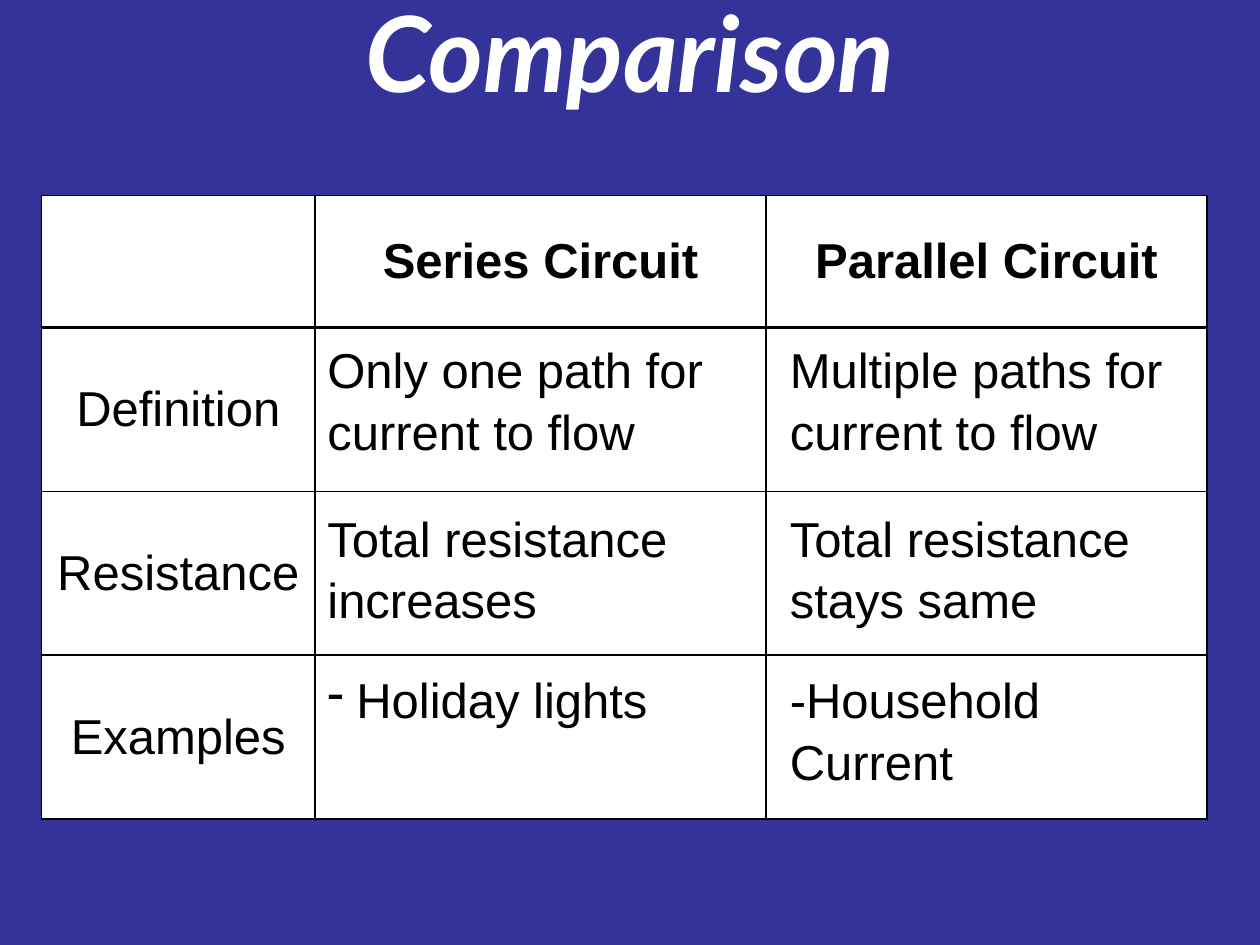
from itertools import accumulate

from lxml.etree import SubElement
from pptx import Presentation
from pptx.dml.color import RGBColor as Rgb
from pptx.enum.text import MSO_ANCHOR as Anchor, MSO_AUTO_SIZE as AutoSize, PP_ALIGN as Align
from pptx.oxml.ns import qn
from pptx.util import Inches, Pt

COLORS = {"ground": "333399", "paper": "FFFFFF", "ink": "000000"}
COLUMNS = (2.17, 3.58, 3.5)
ROWS = (1.05, 1.3, 1.3, 1.3)
GRID_AT = (0.33, 1.55)
HEADINGS = ("Series Circuit", "Parallel Circuit")
TOPICS = ("Definition", "Resistance", "Examples")
ANSWERS = (
    ("Only one path for current to flow", "Multiple paths for current to flow"),
    ("Total resistance increases", "Total resistance stays same"),
    ("Holiday lights", "-Household Current"),
)
ANSWER_HEIGHTS = ((1.03, 1.03), (1.03, 1.03), (0.57, 1.03))
TITLE_FORMAT = {"name": "Lato", "size": Pt(60), "bold": True, "italic": True}
HEADING_FORMAT = {"name": "Arial", "size": Pt(28), "bold": True}
BODY_FORMAT = {"name": "Arial", "size": Pt(28), "bold": False}


def write(frame, wording, formats, color, **layout):
    """Put one formatted paragraph into a text frame and return it."""
    paragraph = frame.paragraphs[0]
    run = paragraph.add_run()
    run.text = wording
    for key, value in formats.items():
        setattr(run.font, key, value)
    run.font.color.rgb = Rgb.from_string(COLORS[color])
    for key, value in layout.items():
        setattr(paragraph, key, value)
    return paragraph


def add_dash(paragraph, indent):
    """Give a paragraph a hanging dash."""
    properties = paragraph._p.get_or_add_pPr()
    properties.set("marL", str(indent))
    properties.set("indent", str(-indent))
    SubElement(properties, qn("a:buChar"), char="-")


def style_cell(cell, top, bottom):
    """Draw the cell's borders and fill it with paper."""
    properties = cell._tc.get_or_add_tcPr()
    for side, width in (("L", 1), ("R", 1), ("T", top), ("B", bottom)):
        line = SubElement(properties, qn(f"a:ln{side}"), w=str(Pt(width)))
        SubElement(SubElement(line, qn("a:solidFill")), qn("a:srgbClr"), val=COLORS["ink"])
    cell.fill.solid()
    cell.fill.fore_color.rgb = Rgb.from_string(COLORS["paper"])
    cell.vertical_anchor = Anchor.MIDDLE


def add_title(slide, left, top, width, height):
    """Place the heading of the slide."""
    title = slide.shapes.title
    title.left, title.top, title.width, title.height = map(Inches, (left, top, width, height))
    frame = title.text_frame
    frame.vertical_anchor = Anchor.MIDDLE
    write(frame, "Comparison", TITLE_FORMAT, "paper", alignment=Align.CENTER, line_spacing=0.8)


def add_grid(slide, left, top):
    """Place the table with its column headings and row topics."""
    box = map(Inches, (left, top, sum(COLUMNS), sum(ROWS)))
    table = slide.shapes.add_table(len(ROWS), len(COLUMNS), *box).table
    for column, width in zip(table.columns, COLUMNS):
        column.width = Inches(width)
    for index, height in enumerate(ROWS):
        table.rows[index].height = Inches(height)
        for cell in table.rows[index].cells:
            style_cell(cell, 2 if index == 1 else 1, 2 if index == 0 else 1)
    for index, heading in enumerate(HEADINGS, 1):
        write(table.cell(0, index).text_frame, heading, HEADING_FORMAT, "ink", alignment=Align.CENTER)
    for index, topic in enumerate(TOPICS, 1):
        write(table.cell(index, 0).text_frame, topic, BODY_FORMAT, "ink", alignment=Align.CENTER)


def add_answers(slide, left, top):
    """Place the answers over the open cells of the grid."""
    lefts = [left + edge + gap for edge, gap in zip(accumulate(COLUMNS), (0, 0.09))]
    tops = [top + edge + gap for edge, gap in zip(accumulate(ROWS), (0.03, 0.07, 0.05))]
    for y, answers, heights in zip(tops, ANSWERS, ANSWER_HEIGHTS):
        for x, answer, height in zip(lefts, answers, heights):
            box = map(Inches, (x, y, COLUMNS[1], height))
            frame = slide.shapes.add_textbox(*box).text_frame
            frame.word_wrap = True
            frame.auto_size = AutoSize.SHAPE_TO_FIT_TEXT
            paragraph = write(frame, answer, BODY_FORMAT, "ink", line_spacing=1.04)
            if answer == "Holiday lights":
                add_dash(paragraph, Inches(0.23))


def main():
    """Build the comparison slide and save it."""
    deck = Presentation()
    deck.slide_width, deck.slide_height = Inches(10), Inches(7.5)
    slide = deck.slides.add_slide(deck.slide_layouts[5])
    slide.background.fill.solid()
    slide.background.fill.fore_color.rgb = Rgb.from_string(COLORS["ground"])
    add_title(slide, 0.5, 0.08, 9, 0.83)
    add_grid(slide, *GRID_AT)
    add_answers(slide, *GRID_AT)
    deck.save("out.pptx")


if __name__ == "__main__":
    main()
